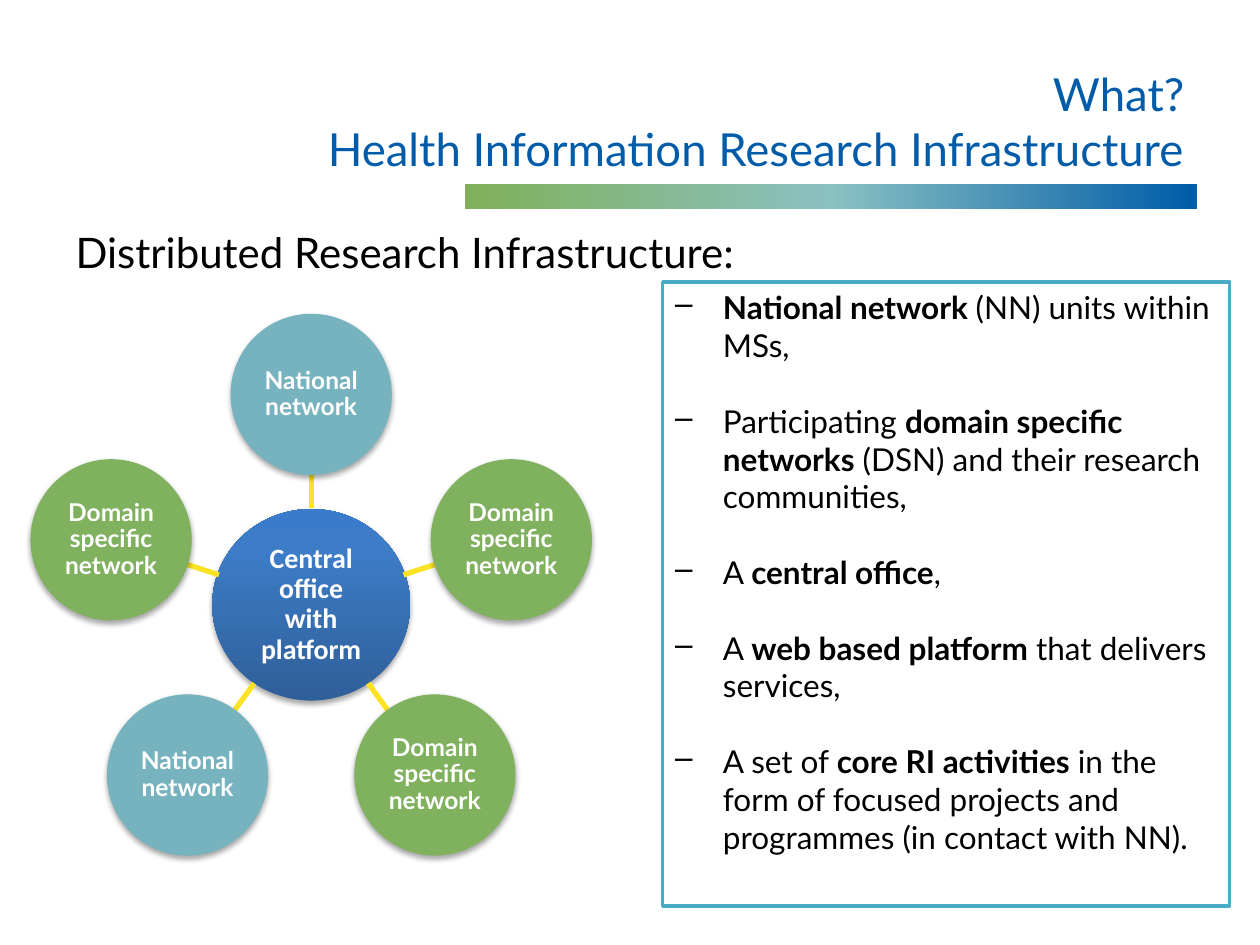
import math
from dataclasses import dataclass

import lxml.etree
import pptx
import pptx.dml.color
import pptx.enum.shapes
import pptx.enum.text
import pptx.oxml.ns
import pptx.util

Inches = pptx.util.Inches
Pt = pptx.util.Pt
RGB = pptx.dml.color.RGBColor
SHAPE = pptx.enum.shapes.MSO_SHAPE
ALIGN = pptx.enum.text.PP_ALIGN
ANCHOR = pptx.enum.text.MSO_ANCHOR
FIT = pptx.enum.text.MSO_AUTO_SIZE
qn = pptx.oxml.ns.qn

NAVY = RGB(0x00, 0x5C, 0xA9)
GREEN = RGB(0x80, 0xB1, 0x5E)
TEAL = RGB(0x77, 0xB3, 0xBF)
YELLOW = RGB(0xFB, 0xE3, 0x23)
CYAN = RGB(0x4B, 0xAC, 0xC6)
WHITE = RGB(0xFF, 0xFF, 0xFF)
BLACK = RGB(0x00, 0x00, 0x00)
BAR_STOPS = [(0, RGB(0x80, 0xB0, 0x59)), (50, RGB(0x8A, 0xC1, 0xC2)), (100, NAVY)]
HUB_STOPS = [(0, RGB(0x2F, 0x5F, 0x99)), (80, RGB(0x3D, 0x7C, 0xC7)),
             (100, RGB(0x3A, 0x7C, 0xCB))]

HUB_X, HUB_Y = 2.47, 4.8
HUB_WIDTH, HUB_HEIGHT = 1.57, 1.52
NODE_SIZE = 1.28
RING = 1.67
SPOKE_START, SPOKE_END = 0.77, RING - NODE_SIZE / 2


@dataclass
class Node:
    label: str
    color: RGB


@dataclass
class Part:
    text: str
    bold: bool = False


# Clockwise from the top
NODES = [
    Node("National network", TEAL),
    Node("Domain specific network", GREEN),
    Node("Domain specific network", GREEN),
    Node("National network", TEAL),
    Node("Domain specific network", GREEN),
]

POINTS = [
    [Part("National network ", True), Part("(NN) units within MSs,")],
    [Part("Participating "), Part("domain specific networks", True),
     Part(" (DSN) and their research communities,")],
    [Part("A "), Part("central office", True), Part(",")],
    [Part("A "), Part("web based platform", True), Part(" that delivers services,")],
    [Part("A set of "), Part("core RI activities", True),
     Part(" in the form of focused projects and programmes (in contact with NN).")],
]


def place(shape, left: float, top: float, width: float, height: float) -> None:
    shape.left, shape.top = Inches(left), Inches(top)
    shape.width, shape.height = Inches(width), Inches(height)


def add_run(para, text: str, size: float, color: RGB, bold: bool = False,
            face: str = "Lato") -> None:
    run = para.add_run()
    run.text = text
    run.font.name, run.font.size, run.font.bold = face, Pt(size), bold
    run.font.color.rgb = color


def fill_blend(shape, stops: list, angle: float) -> None:
    """Fill with a linear gradient of any number of stops."""
    shape.fill.gradient()
    shape.fill.gradient_angle = angle
    group = shape._element.spPr.find(qn("a:gradFill")).find(qn("a:gsLst"))
    for old in list(group):
        group.remove(old)
    for spot, color in stops:
        stop = lxml.etree.SubElement(group, qn("a:gs"), pos=str(spot * 1000))
        lxml.etree.SubElement(stop, qn("a:srgbClr"), val=str(color))


def add_shade(shape) -> None:
    """Give the shape a soft shadow straight below it."""
    effects = shape._element.spPr.find(qn("a:effectLst"))
    shade = lxml.etree.SubElement(effects, qn("a:outerShdw"), blurRad="40000",
                                  dist="23000", dir="5400000", rotWithShape="0")
    color = lxml.etree.SubElement(shade, qn("a:srgbClr"), val="000000")
    lxml.etree.SubElement(color, qn("a:alpha"), val="35000")


def add_plain(slide, kind, left: float, top: float, width: float, height: float):
    """Add a shape with neither line nor shadow."""
    shape = slide.shapes.add_shape(kind, Inches(left), Inches(top),
                                   Inches(width), Inches(height))
    shape.shadow.inherit = False
    shape.line.fill.background()
    return shape


def add_disc(slide, x: float, y: float, width: float, height: float,
             lines: list[str], size: float, face: str):
    """Add a labelled ellipse centred on x, y."""
    disc = add_plain(slide, SHAPE.OVAL, x - width / 2, y - height / 2, width, height)
    add_shade(disc)
    frame = disc.text_frame
    frame.word_wrap = True
    frame.vertical_anchor = ANCHOR.MIDDLE
    frame.margin_left = frame.margin_right = Inches(0.01)
    frame.margin_top = frame.margin_bottom = Inches(0.01)
    para = frame.paragraphs[0]
    para.alignment, para.line_spacing = ALIGN.CENTER, 0.9
    add_lines(para, lines, size, WHITE, True, face)
    return disc


def add_lines(para, lines: list[str], size: float, color: RGB, bold: bool = False,
              face: str = "Lato") -> None:
    for index, line in enumerate(lines):
        if index:
            para.add_line_break()
        add_run(para, line, size, color, bold, face)


def add_spoke(slide, turn: float) -> None:
    ends = [Inches(value) for reach in (SPOKE_START, SPOKE_END)
            for value in (HUB_X + reach * math.sin(turn), HUB_Y - reach * math.cos(turn))]
    spoke = slide.shapes.add_connector(pptx.enum.shapes.MSO_CONNECTOR.STRAIGHT, *ends)
    spoke.line.color.rgb, spoke.line.width = YELLOW, Pt(3)
    lxml.etree.SubElement(spoke._element.spPr, qn("a:effectLst"))


def add_wheel(slide) -> None:
    hub = add_disc(slide, HUB_X, HUB_Y, HUB_WIDTH, HUB_HEIGHT,
                   ["Central office", "with platform"], 16, "Calibri")
    fill_blend(hub, HUB_STOPS, 90)
    for index, node in enumerate(NODES):
        turn = math.tau * index / len(NODES)
        add_spoke(slide, turn)
        disc = add_disc(slide, HUB_X + RING * math.sin(turn), HUB_Y - RING * math.cos(turn),
                        NODE_SIZE, NODE_SIZE, [node.label], 14, "Lato")
        disc.fill.solid()
        disc.fill.fore_color.rgb = node.color


def add_points(slide) -> None:
    box = add_plain(slide, SHAPE.RECTANGLE, 5.26, 2.24, 4.5, 4.95)
    box.fill.solid()
    box.fill.fore_color.rgb = WHITE
    box.line.color.rgb, box.line.width = CYAN, Pt(2)
    frame = box.text_frame
    frame.word_wrap = True
    frame.vertical_anchor = ANCHOR.TOP
    for index, parts in enumerate(POINTS):
        para = frame.add_paragraph() if index else frame.paragraphs[0]
        props = para._p.get_or_add_pPr()
        props.set("marL", str(Inches(0.38)))
        props.set("indent", str(-Inches(0.38)))
        lxml.etree.SubElement(props, qn("a:buChar"), char="–")
        para.alignment = ALIGN.LEFT
        if index:
            para.space_before = Pt(21.6)
        for part in parts:
            add_run(para, part.text, 18, BLACK, part.bold)


def add_heads(slide) -> None:
    title, body = slide.shapes.title, slide.placeholders[1]
    place(title, 0.5, 0.3, 9, 1.14)
    title.text_frame.vertical_anchor = ANCHOR.BOTTOM
    title.text_frame.auto_size = FIT.NONE
    para = title.text_frame.paragraphs[0]
    para.alignment = ALIGN.RIGHT
    add_lines(para, ["What?", "Health Information Research Infrastructure"], 26, NAVY)

    place(body, 0.5, 1.75, 9, 4.07)
    body.text_frame.auto_size = FIT.NONE
    para = body.text_frame.paragraphs[0]
    props = para._p.get_or_add_pPr()
    props.set("marL", "0")
    props.set("indent", "0")
    lxml.etree.SubElement(props, qn("a:buNone"))
    para.space_before = Pt(0)
    add_run(para, "Distributed Research Infrastructure:", 24, BLACK)


def main() -> None:
    deck = pptx.Presentation()
    deck.slide_width, deck.slide_height = Inches(10), Inches(7.5)
    slide = deck.slides.add_slide(deck.slide_layouts[1])
    add_heads(slide)
    fill_blend(add_plain(slide, SHAPE.RECTANGLE, 3.69, 1.46, 5.81, 0.2), BAR_STOPS, 0)
    add_wheel(slide)
    add_points(slide)
    deck.save("out.pptx")


if __name__ == "__main__":
    main()
